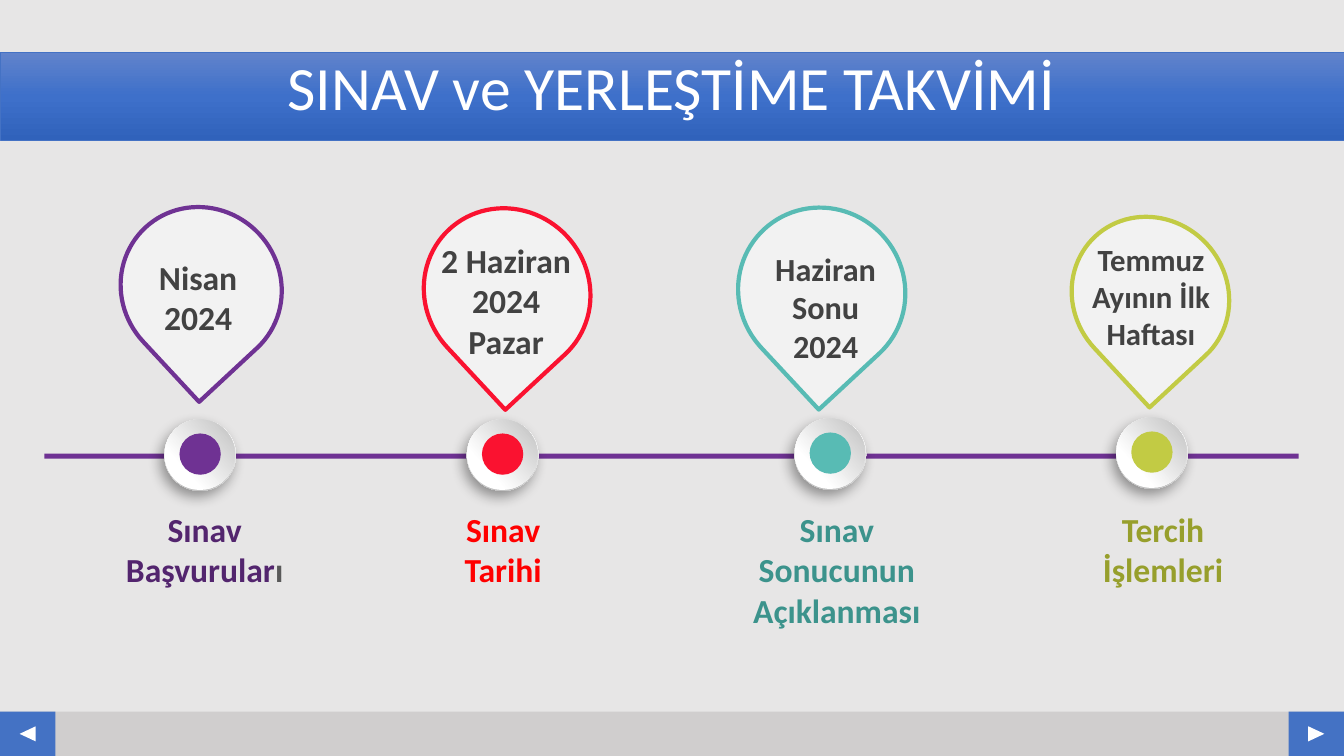
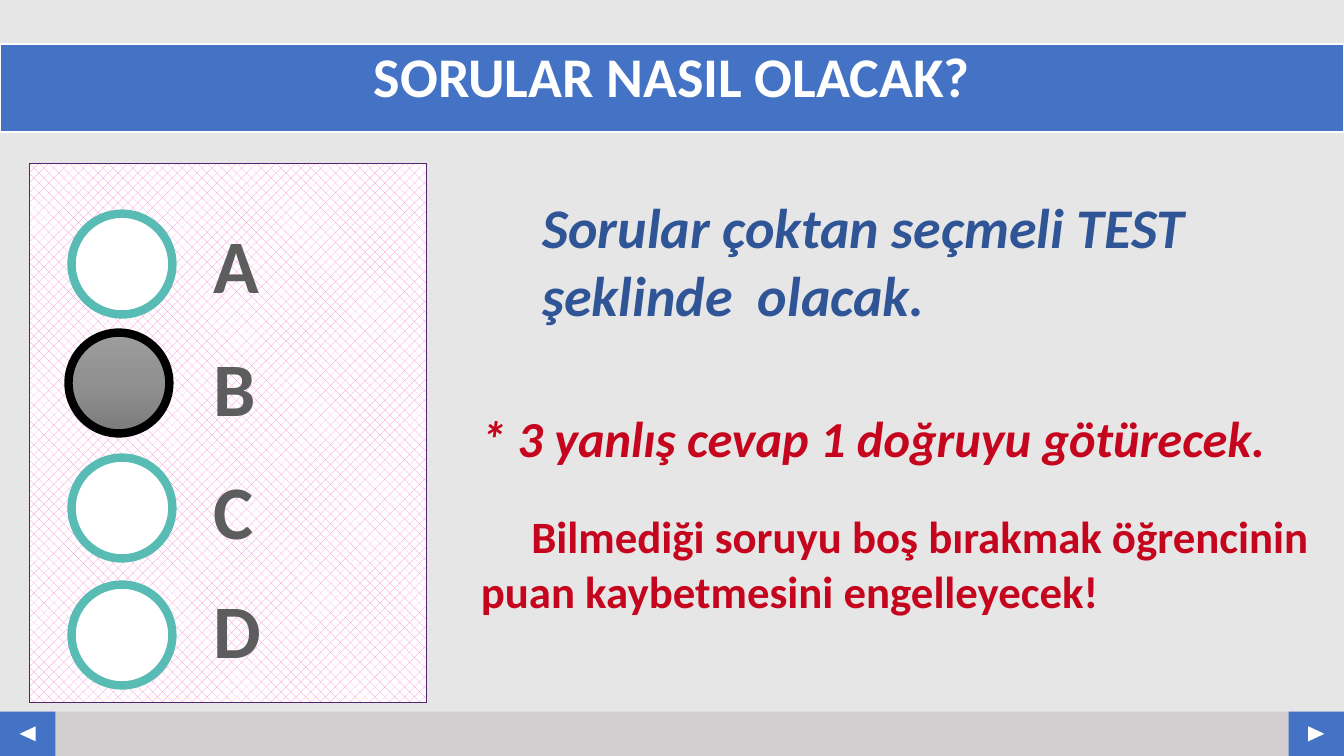
"""Builds two slides on an exam: the calendar and the question format."""
import lxml.etree
import pptx
import pptx.dml.color
import pptx.enum.dml
import pptx.enum.shapes
import pptx.enum.text
import pptx.oxml.ns
import pptx.util

Inches = pptx.util.Inches
Pt = pptx.util.Pt
qn = pptx.oxml.ns.qn
SHAPE = pptx.enum.shapes.MSO_SHAPE
ALIGN = pptx.enum.text.PP_ALIGN
ANCHOR = pptx.enum.text.MSO_ANCHOR

THEME = {
    "font": "Calibri",
    "background": "E7E6E6",
    "footer": "D0CECE",
    "blue": "4472C4",
    "dark_blue": "2F5597",
    "white": "FFFFFF",
    "black": "000000",
    "purple": "6F3293",
    "red": "FA1230",
    "teal": "58BBB4",
    "lime": "C2CB44",
    "purple_text": "53256E",
    "red_text": "FF0000",
    "teal_text": "3C938C",
    "lime_text": "979F2C",
    "pin_fill": "F2F2F2",
    "pin_text": "424242",
    "grey_text": "595959",
    "letter": "5D5D5D",
    "warning": "C5041D",
    "panel_line": "52256D",
    "panel_pattern": "FB85D4",
    "band_gradient": [(0, "6183CB"), (50, "3E70CA"), (100, "3062BB")],
    "marked_gradient": [(0, "9D9D9D"), (50, "909090"), (100, "7C7C7C")],
    "ring_gradient": [(17, "FFFFFF"), (88, "B8B8B8")],
    "face_gradient": [(29, "FFFFFF"), (98, "BFBFBF")],
    "title_size": 44,
    "bold_title_size": 40,
    "label_size": 24,
    "letter_size": 54,
    "statement_size": 40,
    "rule_size": 36,
    "advice_size": 32,
}


def add_shape(slide, kind, box, fill, line=None, width=1, rotation=0, angle=90):
    """Add a preset shape; fill is a colour or a list of gradient stops."""
    shape = slide.shapes.add_shape(kind, *map(Inches, box))
    shape.shadow.inherit = False
    shape.rotation = rotation
    if isinstance(fill, list):
        shape.fill.gradient()
        shape.fill.gradient_angle = 360 - angle
        stops = shape._element.spPr.find(qn("a:gradFill")).find(qn("a:gsLst"))
        stops.clear()
        for position, color in fill:
            stop = lxml.etree.SubElement(stops, qn("a:gs"), pos=str(position * 1000))
            lxml.etree.SubElement(stop, qn("a:srgbClr"), val=color)
    else:
        shape.fill.solid()
        shape.fill.fore_color.rgb = pptx.dml.color.RGBColor.from_string(fill)
    if line:
        shape.line.color.rgb = pptx.dml.color.RGBColor.from_string(line)
        shape.line.width = Pt(width)
    else:
        shape.line.fill.background()
    return shape


def write_text(shape, paragraphs, size, color, frame=None, layout=None, **font):
    """Write paragraphs, each a list of (text, colour) runs or a plain string."""
    text_frame = shape.text_frame
    frame_format = {"word_wrap": True, "vertical_anchor": ANCHOR.TOP, **(frame or {})}
    for name, value in frame_format.items():
        setattr(text_frame, name, value)
    for index, runs in enumerate(paragraphs):
        paragraph = text_frame.add_paragraph() if index else text_frame.paragraphs[0]
        paragraph_format = {"alignment": ALIGN.CENTER, **(layout or {})}
        for name, value in paragraph_format.items():
            setattr(paragraph, name, value)
        for text, run_color in [(runs, color)] if isinstance(runs, str) else runs:
            run = paragraph.add_run()
            run.text = text
            font_format = {"name": THEME["font"], "size": Pt(size), "bold": True, **font}
            for name, value in font_format.items():
                setattr(run.font, name, value)
            run.font.color.rgb = pptx.dml.color.RGBColor.from_string(run_color)


presentation = pptx.Presentation()
presentation.slide_width = Inches(13.33)
presentation.slide_height = Inches(7.5)
background = presentation.slide_master.background.fill
background.solid()
background.fore_color.rgb = pptx.dml.color.RGBColor.from_string(THEME["background"])

titles = [
    ("SINAV ve YERLEŞTİME TAKVİMİ", 0.52, THEME["band_gradient"], THEME["blue"], 0.5,
     THEME["title_size"], False),
    ("SORULAR NASIL OLACAK?", 0.44, THEME["blue"], THEME["white"], 1.5,
     THEME["bold_title_size"], True),
]
for title, top, fill, line, width, size, bold in titles:
    slide = presentation.slides.add_slide(presentation.slide_layouts[6])
    add_shape(slide, SHAPE.RECTANGLE, (0, 7.06, 13.33, 0.44), THEME["footer"])
    for left, rotation in [(0, 270), (12.78, 90)]:
        add_shape(slide, SHAPE.RECTANGLE, (left, 7.06, 0.55, 0.44), THEME["blue"])
        add_shape(slide, SHAPE.ISOSCELES_TRIANGLE, (left + 0.2, 7.2, 0.15, 0.16),
                  THEME["white"], rotation=rotation)
    band = add_shape(slide, SHAPE.RECTANGLE, (0, top, 13.33, 0.87), fill, line, width)
    write_text(band, [title], size, THEME["white"], layout={"line_spacing": 0.9}, bold=bold)

calendar, questions = presentation.slides

add_shape(calendar, SHAPE.RECTANGLE, (0.44, 4.5, 12.44, 0.05), THEME["purple"])
milestones = [
    {"color": "purple", "node": (1.63, 4.16), "pin": (1.21, 2.04, 1.57, 1.63),
     "date_box": (0.96, 2.5, 2.01, 0.91), "date": ["Nisan", "2024"], "size": 24,
     "label_box": (1.08, 5, 1.9, 0.91),
     "label": [("Sınav Başvurular", THEME["purple_text"]), ("ı", THEME["grey_text"])]},
    {"color": "red", "node": (4.63, 4.16), "pin": (4.22, 2.05, 1.62, 1.69),
     "date_box": (4.22, 2.33, 1.6, 1.31), "date": ["2 Haziran", "2024", "Pazar"], "size": 24,
     "label_box": (4.15, 5, 1.68, 0.91),
     "label": "Sınav Tarihi"},
    {"color": "teal", "node": (7.88, 4.15), "pin": (7.33, 2.05, 1.64, 1.68),
     "date_box": (7.29, 2.42, 1.8, 1.26), "date": ["Haziran Sonu", "2024"], "size": 23,
     "label_box": (7.22, 5, 2.16, 1.31),
     "label": "Sınav Sonucunun Açıklanması"},
    {"color": "lime", "node": (11.07, 4.14), "pin": (10.65, 2.13, 1.52, 1.61),
     "date_box": (10.69, 2.34, 1.45, 1.21), "date": ["Temmuz", "Ayının İlk Haftası"], "size": 22,
     "label_box": (10.76, 5, 1.55, 0.91),
     "label": "Tercih İşlemleri"},
]
for milestone in milestones:
    color = THEME[milestone["color"]]
    left, top = milestone["node"]
    ring = add_shape(calendar, SHAPE.OVAL, (left, top, 0.71, 0.71), THEME["ring_gradient"],
                     rotation=62.3, angle=45)
    shadow = lxml.etree.SubElement(
        ring._element.spPr.find(qn("a:effectLst")), qn("a:outerShdw"),
        blurRad=str(Pt(10)), dist=str(Pt(5)), dir=str(123 * 60000), rotWithShape="0")
    shadow_color = lxml.etree.SubElement(shadow, qn("a:srgbClr"), val=THEME["black"])
    lxml.etree.SubElement(shadow_color, qn("a:alpha"), val="39000")
    add_shape(calendar, SHAPE.OVAL, (left, top, 0.7, 0.7), THEME["face_gradient"],
              rotation=273, angle=45)
    add_shape(calendar, SHAPE.OVAL, (left + 0.15, top + 0.14, 0.41, 0.41), color)
    add_shape(calendar, SHAPE.TEAR, milestone["pin"], THEME["pin_fill"], color, 3, 137.1)
    date = calendar.shapes.add_textbox(*map(Inches, milestone["date_box"]))
    write_text(date, milestone["date"], milestone["size"], THEME["pin_text"])
    label = calendar.shapes.add_textbox(*map(Inches, milestone["label_box"]))
    write_text(label, [milestone["label"]], THEME["label_size"],
               THEME[milestone["color"] + "_text"])

panel = add_shape(questions, SHAPE.RECTANGLE, (0.29, 1.62, 3.94, 5.35), THEME["white"],
                  THEME["panel_line"], 1)
panel.fill.patterned()
panel.fill.pattern = pptx.enum.dml.MSO_PATTERN.PERCENT_30
panel.fill.fore_color.rgb = pptx.dml.color.RGBColor.from_string(THEME["panel_pattern"])
panel.fill.back_color.rgb = pptx.dml.color.RGBColor.from_string(THEME["white"])

choices = [
    ("A", 0.71, 2.12, 2.11, THEME["white"], THEME["teal"]),
    ("B", 0.68, 3.3, 3.33, THEME["marked_gradient"], THEME["black"]),
    ("C", 0.71, 4.54, 4.55, THEME["white"], THEME["teal"]),
    ("D", 0.71, 5.8, 5.73, THEME["white"], THEME["teal"]),
]
for letter, left, circle_top, letter_top, fill, line in choices:
    add_shape(questions, SHAPE.OVAL, (left, circle_top, 1, 1), fill, line, 6)
    letter_box = questions.shapes.add_textbox(*map(Inches, (2.02, letter_top, 0.68, 1.01)))
    write_text(letter_box, [letter], THEME["letter_size"], THEME["letter"],
               layout={"alignment": ALIGN.LEFT})

statements = [
    ("Sorular çoktan seçmeli TEST şeklinde  olacak.", (5.25, 1.84, 7.09, 1.48),
     THEME["statement_size"], THEME["dark_blue"], True, 1, 0),
    ("* 3 yanlış cevap 1 doğruyu götürecek.", (4.64, 3.97, 8.57, 0.74),
     THEME["rule_size"], THEME["warning"], True, 1, 0),
    ("Bilmediği soruyu boş bırakmak öğrencinin puan kaybetmesini engelleyecek!",
     (4.64, 4.95, 8.57, 1.25), THEME["advice_size"], THEME["warning"], False, 1.04, 0.5),
]
for text, box, size, color, italic, spacing, indent in statements:
    statement = questions.shapes.add_textbox(*map(Inches, box))
    write_text(statement, [text], size, color,
               {"vertical_anchor": ANCHOR.MIDDLE, "margin_left": Inches(0.13),
                "margin_right": Inches(0.13)},
               {"alignment": ALIGN.LEFT, "line_spacing": spacing}, italic=italic)
    properties = statement.text_frame.paragraphs[0]._p.get_or_add_pPr()
    properties.set("indent", str(Inches(indent)))

presentation.save("out.pptx")
